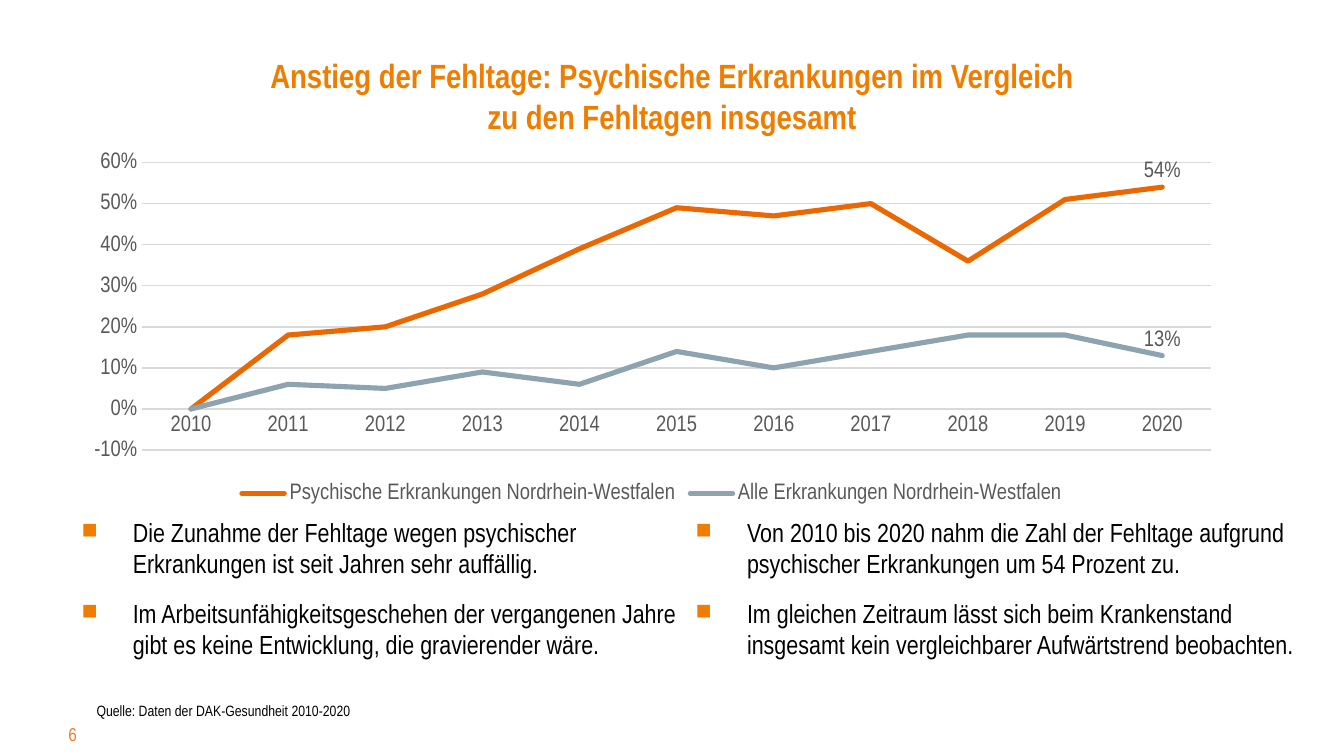
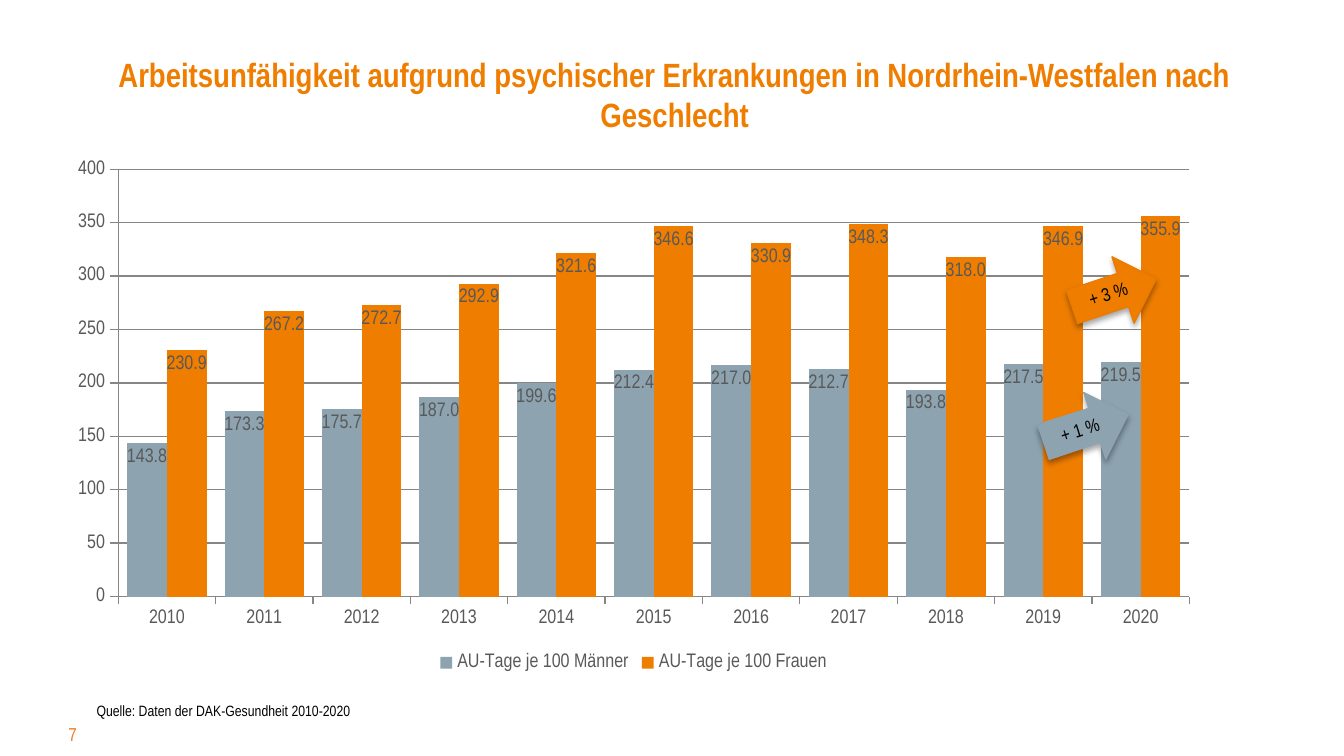
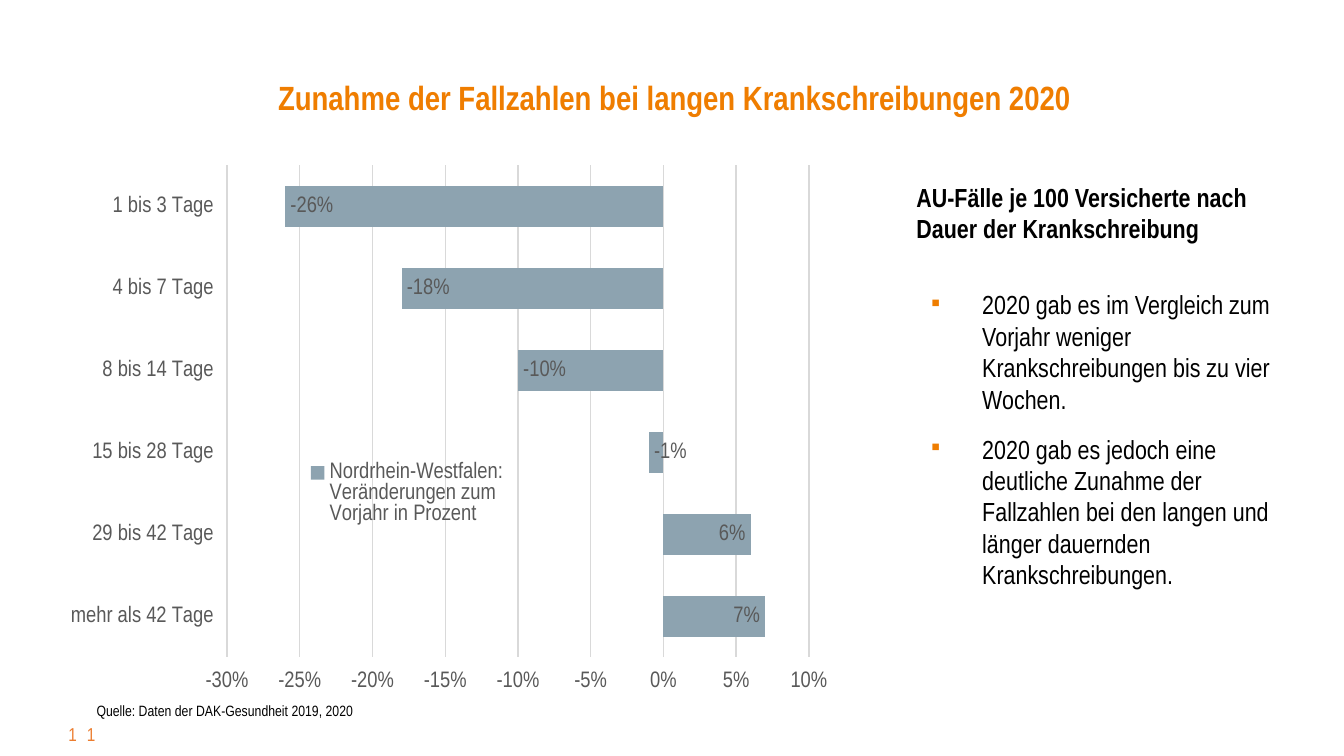
from dataclasses import dataclass

from lxml import etree
from pptx import Presentation
from pptx import util as u
from pptx.chart.data import CategoryChartData
from pptx.dml.color import RGBColor
from pptx.enum import chart as ch, shapes, text
from pptx.oxml import parse_xml
from pptx.oxml.ns import nsdecls, qn


@dataclass(frozen=True)
class Theme:
    font: str = "Arial Narrow"
    orange: str = "EF7D00"
    orange_edge: str = "EA7A00"
    orange_line: str = "EB6702"
    page_orange: str = "EC7D2F"
    steel: str = "8DA3B0"
    black: str = "000000"
    chart_text: str = "595959"
    light_grid: str = "D9D9D9"
    dark_grid: str = "868686"
    title_size: float = 18
    body_size: float = 14
    chart_size: float = 12
    dense_chart_size: float = 10.5
    small_size: float = 10
    source_size: float = 8


THEME = Theme()
YEARS = [str(year) for year in range(2010, 2021)]


def rgb(value):
    return RGBColor.from_string(value)


def inches(box):
    return [u.Inches(length) for length in box]


def style_font(font, size, color, bold=False):
    font.name = THEME.font
    font.size = u.Pt(size)
    font.bold = bold
    font.color.rgb = rgb(color)


def set_bullet(paragraph, char):
    props = paragraph._p.get_or_add_pPr()
    props.set("marL", str(u.Inches(0.38)))
    props.set("indent", str(-u.Inches(0.38)))
    color = etree.SubElement(props, qn("a:buClr"))
    etree.SubElement(color, qn("a:srgbClr")).set("val", THEME.orange)
    etree.SubElement(props, qn("a:buFont")).set("typeface", THEME.font)
    etree.SubElement(props, qn("a:buChar")).set("char", char)


def add_text(parent, box, *lines, size=THEME.body_size, color=THEME.black,
             bold=False, align=text.PP_ALIGN.LEFT, anchor=text.MSO_ANCHOR.TOP,
             wrap=True, bullet=None, tracking=None, rotation=0, fill=None):
    """Add a text box with one paragraph for each line."""
    holder = parent.add_textbox(*inches(box))
    holder.rotation = rotation
    if fill:
        holder.fill.solid()
        holder.fill.fore_color.rgb = rgb(fill)
    frame = holder.text_frame
    frame.word_wrap = wrap
    if not wrap:
        frame.auto_size = text.MSO_AUTO_SIZE.SHAPE_TO_FIT_TEXT
    frame.vertical_anchor = anchor
    for index, line in enumerate(lines):
        paragraph = frame.add_paragraph() if index else frame.paragraphs[0]
        paragraph.text = line
        paragraph.alignment = align
        if index:
            paragraph.space_before = u.Pt(10)
        if bullet:
            set_bullet(paragraph, bullet)
        for run in paragraph.runs:
            style_font(run.font, size, color, bold)
            if tracking:
                run._r.get_or_add_rPr().set("spc", str(tracking * 100))


def add_base_slide(deck, title, title_box, page, source, source_width=2.1):
    """Add a blank slide with title, source line and page number."""
    slide = deck.slides.add_slide(deck.slide_layouts[6])
    add_text(slide.shapes, title_box, title, size=THEME.title_size,
             color=THEME.orange, bold=True, align=text.PP_ALIGN.CENTER,
             anchor=text.MSO_ANCHOR.BOTTOM)
    add_text(slide.shapes, (0.41, 5.31, 2.33, 0.3), page, size=THEME.small_size,
             color=THEME.page_orange, anchor=text.MSO_ANCHOR.MIDDLE, tracking=6)
    add_text(slide.shapes, (0.62, 5.17, source_width, 0.24), source,
             size=THEME.source_size, wrap=False)
    return slide


def manual_layout(box, area, inner=False):
    """Turn an area in slide inches into a layout inside the chart box."""
    left, top, width, height = box
    x, y = (area[0] - left) / width, (area[1] - top) / height
    w, h = area[2] / width, area[3] / height
    target = '<c:layoutTarget val="inner"/>' if inner else ""
    return parse_xml(
        f'<c:layout {nsdecls("c")}><c:manualLayout>{target}'
        '<c:xMode val="edge"/><c:yMode val="edge"/>'
        f'<c:x val="{x:.4f}"/><c:y val="{y:.4f}"/>'
        f'<c:w val="{w:.4f}"/><c:h val="{h:.4f}"/>'
        '</c:manualLayout></c:layout>')


def drop_layout(element):
    for old in element.findall(qn("c:layout")):
        element.remove(old)


def place_plot(chart, box, area):
    plot_area = chart._chartSpace.chart.plotArea
    drop_layout(plot_area)
    plot_area.insert(0, manual_layout(box, area, inner=True))


def place_legend(legend, box, area):
    element = legend._element
    drop_layout(element)
    element.find(qn("c:legendPos")).addnext(manual_layout(box, area))


def style_line(line, color, width=0.75):
    line.color.rgb = rgb(color)
    line.width = u.Pt(width)


def add_chart(slide, kind, box, categories, series, plot, scale, number_format,
              axis_format, size=THEME.chart_size, grid=THEME.light_grid,
              tick=ch.XL_TICK_MARK.NONE, legend=ch.XL_LEGEND_POSITION.BOTTOM):
    """Add a chart; scale is the minimum, maximum and step of its values."""
    data = CategoryChartData(number_format=number_format)
    data.categories = categories
    for name, values in series:
        data.add_series(name, values)
    chart = slide.shapes.add_chart(kind, *inches(box), data).chart
    chart.has_title = False
    style_font(chart.font, size, THEME.chart_text)
    chart.has_legend = True
    chart.legend.position = legend
    chart.legend.include_in_layout = False
    style_font(chart.legend.font, size, THEME.chart_text)
    chart.plots[0].vary_by_categories = False
    for axis in (chart.category_axis, chart.value_axis):
        axis.major_tick_mark = tick
        axis.minor_tick_mark = ch.XL_TICK_MARK.NONE
        style_font(axis.tick_labels.font, size, THEME.chart_text)
        style_line(axis.format.line, grid)
    values = chart.value_axis
    values.minimum_scale, values.maximum_scale, values.major_unit = scale
    values.tick_labels.number_format = axis_format
    values.tick_labels.number_format_is_linked = False
    values.has_major_gridlines = True
    style_line(values.major_gridlines.format.line, grid)
    place_plot(chart, box, plot)
    return chart


def style_bars(chart, gap, colors, number_format, size):
    plot = chart.plots[0]
    plot.gap_width = gap
    plot.overlap = 0
    for bars, color in zip(plot.series, colors):
        bars.invert_if_negative = False
        bars.format.fill.solid()
        bars.format.fill.fore_color.rgb = rgb(color)
        labels = bars.data_labels
        labels.show_value = True
        labels.number_format = number_format
        labels.number_format_is_linked = False
        labels.position = ch.XL_LABEL_POSITION.INSIDE_END
        style_font(labels.font, size, THEME.chart_text)


def style_lines(chart, colors):
    """Colour each line and label its last point."""
    for line, color in zip(chart.plots[0].series, colors):
        line.smooth = False
        line.marker.style = ch.XL_MARKER_STYLE.NONE
        style_line(line.format.line, color, 2.75)
        line.format.line._get_or_add_ln().set("cap", "rnd")
        line.data_labels.show_value = False
        last = line.points[len(YEARS) - 1].data_label
        style_font(last.font, THEME.chart_size, THEME.chart_text)
        last.position = ch.XL_LABEL_POSITION.ABOVE


def add_soft_shadow(shape):
    shape.shadow.inherit = False
    effects = shape._element.spPr.find(qn("a:effectLst"))
    effects.append(parse_xml(
        f'<a:outerShdw {nsdecls("a")} blurRad="{u.Pt(3.1)}" dist="{u.Pt(1.8)}" '
        'dir="5400000" rotWithShape="0"><a:srgbClr val="000000">'
        '<a:alpha val="35000"/></a:srgbClr></a:outerShdw>'))


def add_growth_arrow(slide, left, top, label, fill, edge, label_fill=None):
    group = slide.shapes.add_group_shape().shapes
    arrow = group.add_shape(shapes.MSO_SHAPE.DOWN_ARROW,
                            *inches((left, top, 0.52, 0.66)))
    arrow.rotation = 251.6
    arrow.fill.solid()
    arrow.fill.fore_color.rgb = rgb(fill)
    style_line(arrow.line, edge)
    add_soft_shadow(arrow)
    add_text(group, (left - 0.03, top + 0.2, 0.5, 0.27), label, wrap=False,
             size=THEME.small_size, rotation=342.5, fill=label_fill)


def build_trend(deck):
    slide = add_base_slide(
        deck, "Anstieg der Fehltage: Psychische Erkrankungen im Vergleich \n"
        "zu den Fehltagen insgesamt ", (0.52, 0.51, 9.02, 0.55), "6",
        "Quelle: Daten der DAK-Gesundheit 2010-2020")
    add_text(slide.shapes, (0.51, 3.79, 4.65, 1.05),
             "Die Zunahme der Fehltage wegen psychischer Erkrankungen ist seit "
             "Jahren sehr auffällig.",
             "Im Arbeitsunfähigkeitsgeschehen der vergangenen Jahre gibt es "
             "keine Entwicklung, die gravierender wäre.", bullet="■")
    add_text(slide.shapes, (5.08, 3.79, 4.65, 1.73),
             "Von 2010 bis 2020 nahm die Zahl der Fehltage aufgrund psychischer "
             "Erkrankungen um 54 Prozent zu.",
             "Im gleichen Zeitraum lässt sich beim Krankenstand insgesamt kein "
             "vergleichbarer Aufwärtstrend beobachten.", bullet="■")
    trend = add_chart(
        slide, ch.XL_CHART_TYPE.LINE, (0.52, 1.08, 8.66, 2.71), YEARS,
        [("Psychische Erkrankungen Nordrhein-Westfalen",
          [0, 0.18, 0.2, 0.28, 0.39, 0.49, 0.47, 0.5, 0.36, 0.51, 0.54]),
         ("Alle Erkrankungen Nordrhein-Westfalen",
          [0, 0.06, 0.05, 0.09, 0.06, 0.14, 0.1, 0.14, 0.18, 0.18, 0.13])],
        plot=(1.06, 1.21, 7.95, 2.14), scale=(-0.1, 0.6, 0.1),
        number_format="0%", axis_format="0%")
    trend.value_axis.format.line.fill.background()
    style_lines(trend, [THEME.orange_line, THEME.steel])


def build_gender(deck):
    slide = add_base_slide(
        deck, "Arbeitsunfähigkeit aufgrund psychischer Erkrankungen in "
        "Nordrhein-Westfalen nach Geschlecht", (0.51, 0.69, 9.02, 0.36), "7",
        "Quelle: Daten der DAK-Gesundheit 2010-2020")
    days = add_chart(
        slide, ch.XL_CHART_TYPE.COLUMN_CLUSTERED, (0.41, 1.12, 8.61, 3.92), YEARS,
        [("AU-Tage je 100 Männer",
          [143.8, 173.3, 175.7, 187, 199.6, 212.4, 217, 212.7, 193.8, 217.5, 219.5]),
         ("AU-Tage je 100 Frauen",
          [230.9, 267.2, 272.7, 292.9, 321.6, 346.6, 330.9, 348.3, 318, 346.9, 355.9])],
        plot=(0.88, 1.26, 7.97, 3.18), scale=(0, 400, 50), number_format="0.0",
        axis_format="#,##0", size=THEME.dense_chart_size, grid=THEME.dark_grid,
        tick=ch.XL_TICK_MARK.OUTSIDE)
    style_bars(days, 45, [THEME.steel, THEME.orange], "0.0", THEME.dense_chart_size)
    add_growth_arrow(slide, 7.82, 2.86, "+ 1 %", THEME.steel, THEME.steel,
                     label_fill=THEME.steel)
    add_growth_arrow(slide, 8.03, 1.85, "+ 3 %", THEME.orange, THEME.orange_edge)


def build_duration(deck):
    slide = add_base_slide(
        deck, "Zunahme der Fallzahlen bei langen Krankschreibungen 2020",
        (0.51, 0.56, 9.02, 0.36), "11",
        "Quelle: Daten der DAK-Gesundheit 2019, 2020", source_width=2.13)
    add_text(slide.shapes, (6.83, 2.1, 2.95, 2.53),
             "2020 gab es im Vergleich zum Vorjahr weniger Krankschreibungen bis "
             "zu vier Wochen.",
             "2020 gab es jedoch eine deutliche Zunahme der Fallzahlen bei den "
             "langen und länger dauernden Krankschreibungen.", bullet="▪")
    add_text(slide.shapes, (6.72, 1.3, 3.05, 0.57),
             "AU-Fälle je 100 Versicherte nach Dauer der Krankschreibung", bold=True)
    chart_box = (0.41, 1.15, 5.86, 4.03)
    changes = add_chart(
        slide, ch.XL_CHART_TYPE.BAR_CLUSTERED, chart_box,
        ["1 bis 3 Tage", "4 bis 7 Tage", "8 bis 14 Tage", "15 bis 28 Tage",
         "29 bis 42 Tage", "mehr als 42 Tage"],
        [("Nordrhein-Westfalen: Veränderungen zum Vorjahr in Prozent",
          [-0.26, -0.18, -0.1, -0.01, 0.06, 0.07])],
        plot=(1.69, 1.23, 4.33, 3.66), scale=(-0.3, 0.1, 0.05),
        number_format="0%", axis_format="0%", legend=ch.XL_LEGEND_POSITION.RIGHT)
    changes.value_axis.format.line.fill.background()
    changes.value_axis.tick_label_position = ch.XL_TICK_LABEL_POSITION.HIGH
    durations = changes.category_axis
    durations.reverse_order = True
    durations.tick_label_position = ch.XL_TICK_LABEL_POSITION.LOW
    changes.legend.include_in_layout = True
    place_legend(changes.legend, chart_box, (2.18, 3.37, 1.7, 0.6))
    style_bars(changes, 100, [THEME.steel], "0%", THEME.chart_size)


def main():
    deck = Presentation()
    deck.slide_width = u.Inches(10)
    deck.slide_height = u.Inches(10 * 9 / 16)
    build_trend(deck)
    build_gender(deck)
    build_duration(deck)
    deck.save("out.pptx")


if __name__ == "__main__":
    main()
